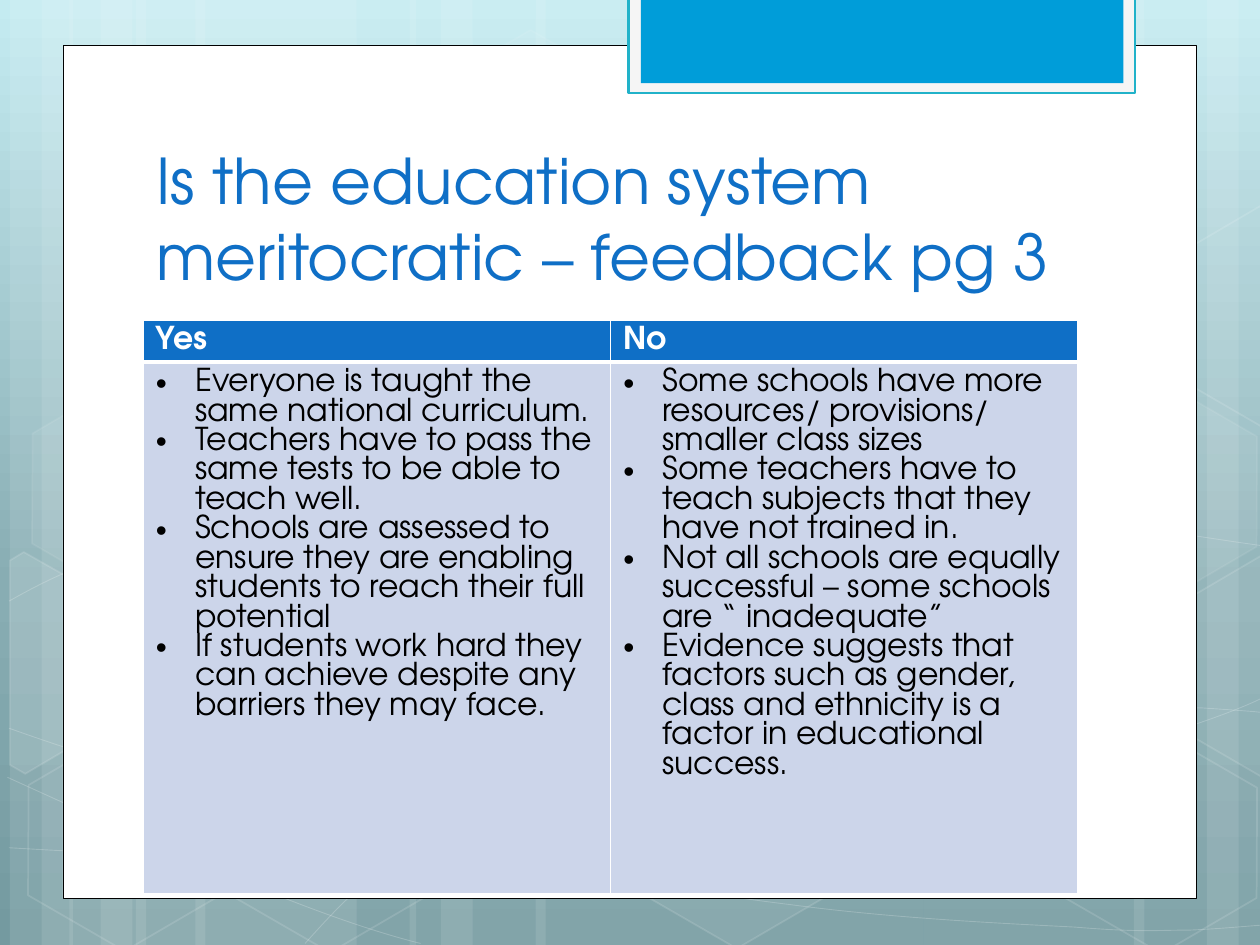
from copy import deepcopy
from dataclasses import dataclass

from lxml import etree
from pptx import Presentation
from pptx.dml.color import RGBColor
from pptx.enum import shapes as kinds, text as t
from pptx.oxml import ns
from pptx.util import Cm, Pt


@dataclass(frozen=True)
class Theme:
    font: str = "TeX Gyre Adventor"
    title_size: float = 36
    title_pitch: float = 43.4
    table_size: float = 18
    table_pitch: float = 16.8
    white: str = "FFFFFF"
    black: str = "000000"
    blue: str = "0F6FC6"
    cell: str = "CCD5EA"
    tab: str = "009DD9"
    tab_frame: str = "F5F5F5"
    tab_line: str = "21B2C9"
    sky: tuple = ((0, "C4EBF1"), (0.62, "88ADB3"), (1, "749AA0"))


THEME = Theme()


def paint(shape, fill=None, line=None, width=1):
    """Fill and outline a shape; each paint is None or (colour, opacity in percent)."""
    shape.shadow.inherit = False
    for part, colour in ((shape.fill, fill), (shape.line.fill, line)):
        if colour is None:
            part.background()
            continue
        part.solid()
        part.fore_color.rgb = RGBColor.from_string(colour[0])
        if colour[1] < 100:
            solid = part._xPr.find(ns.qn("a:solidFill"))
            etree.SubElement(solid[0], ns.qn("a:alpha"), val=str(colour[1] * 1000))
    if line:
        shape.line.width = Pt(width)


def outline(points, close):
    """Draw a freeform through points given in centimetres."""
    corners = [(Cm(x), Cm(y)) for x, y in points]
    builder = slide.shapes.build_freeform(*corners[0], scale=1.0)
    builder.add_line_segments(corners[1:], close=close)
    return builder.convert_to_shape()


prs = Presentation()
prs.slide_width, prs.slide_height = Cm(25.4), Cm(19.05)
slide = prs.slides.add_slide(prs.slide_layouts[5])

# Background gradient, top to bottom
sky = slide.background.fill
sky.gradient()
sky.gradient_angle = 270
first_stop = sky.gradient_stops[0]._gs
first_stop.addnext(deepcopy(first_stop))
for stop, (position, colour) in zip(sky.gradient_stops, THEME.sky):
    stop.position = position
    stop.color.rgb = RGBColor.from_string(colour)

# Pale vertical stripes
stripe_widths = (4.45, 1.27, 2.11)
stripe_groups = ((2.74, 0.2, 0.84), (3.94, 1.4, 2.03), (18.62, 24.33, 22.86))
stripes = [pair for group in stripe_groups for pair in zip(group, stripe_widths)]
stripes += [(10.8, 7.82), (8.26, 1.27), (8.89, 2.11)]
for left, width in stripes:
    stripe = slide.shapes.add_shape(kinds.MSO_SHAPE.RECTANGLE, Cm(left), 0, Cm(width), prs.slide_height)
    paint(stripe, (THEME.white, 10))

# Fine waves: a start point, then Bezier pieces (two controls and an end) or straight ones (an end)
waves = (
    ((0.18, 17.09), (
        (1.55, 17.17, 2.92, 17.25, 4.83, 17.22), (6.73, 17.2, 9.09, 17.15, 11.63, 16.89),
        (14.17, 16.64, 17.78, 16.15, 20.12, 15.67), (22.43, 15.19, 24.82, 14.43, 25.58, 14))),
    ((0.18, 12.12), (
        (0.91, 11.71, 1.65, 11.33, 3.07, 10.95), (4.52, 10.57, 6.58, 10.01, 8.81, 9.83),
        (11.07, 9.65, 13.82, 9.63, 16.61, 9.83), (19.41, 10.03, 24.05, 10.82, 25.58, 11.02))),
    ((0.15, 15.67), ((3.23, 17.07, 6.27, 18.47, 8.48, 19.02),)),
    ((0.18, 14.68), (
        (0.97, 14.96, 1.78, 15.24, 3.25, 15.65), (4.72, 16.03, 6.93, 16.66, 9.07, 17.09),
        (11.18, 17.53, 13.84, 17.98, 15.95, 18.24), (18.06, 18.52, 20.32, 18.62, 21.67, 18.69),
        (22.99, 18.8, 23.34, 18.75, 24, 18.75), (24.66, 18.72, 25.12, 18.67, 25.58, 18.64))),
    ((6.15, 19.02), (
        (6.6, 18.52, 7.06, 18.01, 7.67, 17.55), (8.28, 17.09, 9.14, 16.59, 9.86, 16.23),
        (10.57, 15.88, 11, 15.72, 11.94, 15.47), (12.85, 15.21, 14.55, 14.86, 15.44, 14.68),
        (16.36, 14.5, 16.48, 14.5, 17.27, 14.45), (18.06, 14.38, 19.3, 14.3, 20.17, 14.27),
        (21.06, 14.25, 22.5, 14.27, 22.5, 14.27), (24.21, 14.27),
        (24.66, 14.3, 25.1, 14.33, 25.32, 14.35), (25.55, 14.38, 25.48, 14.35, 25.55, 14.38))),
)
for start, pieces in waves:
    wave = outline([start] + [piece[-2:] for piece in pieces], close=False)
    for segment, piece in zip(list(wave._element.iter(ns.qn("a:lnTo"))), pieces):
        if len(piece) == 2:
            continue
        segment.tag = ns.qn("a:cubicBezTo")
        segment.clear()
        for x, y in zip(piece[::2], piece[1::2]):
            etree.SubElement(segment, ns.qn("a:pt"), x=str(Cm(x) - wave.left), y=str(Cm(y) - wave.top))
    paint(wave, line=(THEME.white, 20), width=0.5)

# Hexagons: left, top, fill opacity, line opacity
hexagons = (
    (8.48, 0.91, 4, 8), (12.62, 14.96, 6, 12), (0.28, 15.01, 0, 12), (0.36, 7.92, 7, 8),
    (4.42, 15.04, 0, 12), (19.13, 11.51, 10, 12), (21.18, 15.06, 0, 12), (21.18, 7.98, 7, 8),
)
for left, top, fill, line in hexagons:
    hexagon = slide.shapes.add_shape(kinds.MSO_SHAPE.HEXAGON, Cm(left), Cm(top), Cm(4.45), Cm(3.86))
    hexagon.adjustments[0] = 0.285
    hexagon.rotation = 30
    paint(hexagon, (THEME.white, fill) if fill else None, (THEME.white, line))

# Hexagons cut off by the slide edge
cut_hexagons = (
    (10, ((0.2, 11.3), (0.48, 11.13), (2.44, 12.24), (2.41, 14.48), (0.51, 15.6), (0.2, 15.42))),
    (4, ((23.52, 12.32), (25.43, 11.2), (25.63, 11.33), (25.63, 15.57), (25.45, 15.67), (23.52, 14.55))),
    (0, ((23.52, 5.26), (25.43, 4.14), (25.65, 4.27), (25.63, 8.51), (25.45, 8.61), (23.52, 7.49))),
)
for fill, points in cut_hexagons:
    paint(outline(points, close=True), (THEME.white, fill) if fill else None, (THEME.white, 12))

# White page and the blue tab at its top
panels = (
    (1.27, 0.91, 22.86, 17.2, THEME.white, THEME.black, 0.5),
    (12.67, -0.05, 10.21, 1.93, THEME.tab_frame, THEME.tab_line, 1.25),
    (12.92, -0.05, 9.73, 1.73, THEME.tab, None, 0),
)
for *box, fill, line, width in panels:
    panel = slide.shapes.add_shape(kinds.MSO_SHAPE.RECTANGLE, *map(Cm, box))
    paint(panel, (fill, 100), (line, 100) if line else None, width)

# Title, brought in front of the page
title = slide.shapes.title
slide.shapes._spTree.append(title._element)
title.left, title.top, title.width, title.height = map(Cm, (2.9, 2.86, 19.51, 3.18))
title.text_frame.text = "Is the education system meritocratic – feedback pg 3"
title.text_frame.auto_size = t.MSO_AUTO_SIZE.NONE
title.text_frame.vertical_anchor = t.MSO_ANCHOR.BOTTOM
heading = title.text_frame.paragraphs[0]
heading.alignment = t.PP_ALIGN.LEFT
heading.line_spacing = Pt(THEME.title_pitch)
heading.font.name, heading.font.size = THEME.font, Pt(THEME.title_size)
heading.font.color.rgb = RGBColor.from_string(THEME.blue)

# Arguments for and against
arguments = {
    "Yes": (
        "Everyone is taught the same national curriculum.",
        "Teachers have to pass the same tests to be able to teach well.",
        "Schools are assessed to ensure they are enabling students to reach their full potential",
        "If students work hard they can achieve despite any barriers they may face.",
    ),
    "No": (
        "Some schools have more resources/ provisions/ smaller class sizes",
        "Some teachers have to teach subjects that they have not trained in.",
        "Not all schools are equally successful – some schools are “ inadequate”",
        "Evidence suggests that factors such as gender, class and ethnicity is a factor in "
        "educational success.",
    ),
}
table = slide.shapes.add_table(2, 2, Cm(2.89), Cm(6.45), Cm(18.84), Cm(11.57)).table
table.rows[0].height, table.rows[1].height = Cm(0.85), Cm(10.72)
for column, (answer, reasons) in enumerate(arguments.items()):
    table.columns[column].width = Cm(9.42)
    for row, lines in enumerate(((answer,), reasons)):
        is_header = row == 0
        cell = table.cell(row, column)
        cell.margin_bottom = 0
        cell.fill.solid()
        cell.fill.fore_color.rgb = RGBColor.from_string(THEME.blue if is_header else THEME.cell)
        for order, side in enumerate("LRTB"):
            meets_header = (is_header and side == "B") or (not is_header and side == "T")
            border = etree.Element(ns.qn(f"a:ln{side}"), w=str(Pt(3 if meets_header else 1)))
            solid = etree.SubElement(border, ns.qn("a:solidFill"))
            etree.SubElement(solid, ns.qn("a:srgbClr"), val=THEME.white)
            cell._tc.tcPr.insert(order, border)
        cell.text = "\n".join(lines)
        for paragraph in cell.text_frame.paragraphs:
            paragraph.line_spacing = Pt(THEME.table_pitch)
            if not is_header:
                props = paragraph._p.get_or_add_pPr()
                props.set("marL", str(Cm(0.79)))
                props.set("indent", str(-Cm(0.79)))
                etree.SubElement(props, ns.qn("a:buFont"), typeface="Arial")
                etree.SubElement(props, ns.qn("a:buChar"), char="•")
            font = paragraph.font
            font.name, font.size, font.bold = THEME.font, Pt(THEME.table_size), is_header
            font.color.rgb = RGBColor.from_string(THEME.white if is_header else THEME.black)

prs.save("out.pptx")
